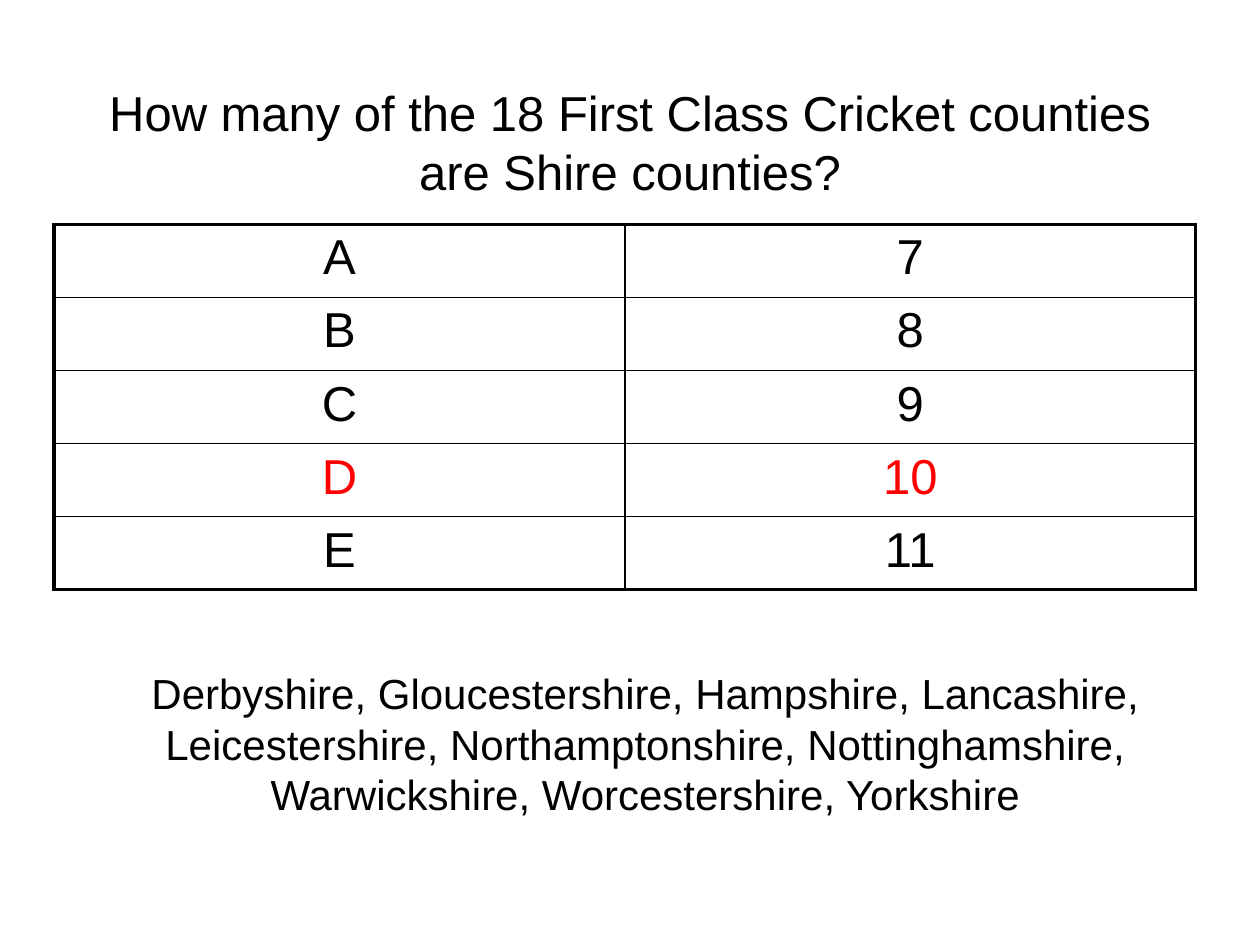
from lxml.etree import SubElement
from pptx import Presentation
from pptx.dml.color import RGBColor
from pptx.enum.text import MSO_ANCHOR, PP_ALIGN
from pptx.oxml.ns import qn
from pptx.util import Inches, Pt

BLACK = RGBColor(0, 0, 0)
RED = RGBColor(255, 0, 0)

QUESTION = "How many of the 18 First Class Cricket counties are Shire counties?"
ANSWERS = [("A", "7"), ("B", "8"), ("C", "9"), ("D", "10"), ("E", "11")]
CORRECT = "D"
COUNTIES = (
    "Derbyshire, Gloucestershire, Hampshire, Lancashire, "
    "Leicestershire, Northamptonshire, Nottinghamshire, "
    "Warwickshire, Worcestershire, Yorkshire"
)
COLUMN, ROW = 4.53, 0.58
OUTER, INNER = Pt(2.25), Pt(1)


def write(frame, text, size, color=BLACK):
    frame.word_wrap = True
    para = frame.paragraphs[0]
    para.alignment = PP_ALIGN.CENTER
    span = para.add_run()
    span.text = text
    span.font.color.rgb = color
    for name, value in {"name": "Arial", "size": Pt(size)}.items():
        setattr(span.font, name, value)
    return para


def draw_border(cell, side, width):
    line = SubElement(cell._tc.get_or_add_tcPr(), qn(f"a:{side}"), w=str(width))
    fill = SubElement(line, qn("a:solidFill"))
    SubElement(fill, qn("a:srgbClr"), val=str(BLACK))


deck = Presentation()
deck.slide_width, deck.slide_height = Inches(10), Inches(7.5)
page = deck.slides.add_slide(deck.slide_layouts[6])

# Question and the list of counties
for text, size, anchor, area in [
    (QUESTION, 28, MSO_ANCHOR.MIDDLE, (0.5, 0.3, 9, 1.64)),
    (COUNTIES, 24, MSO_ANCHOR.TOP, (0.83, 5.25, 8.58, 1.31)),
]:
    box = page.shapes.add_textbox(*map(Inches, area))
    box.text_frame.vertical_anchor = anchor
    write(box.text_frame, text, size)

# Answer table
rows, columns = len(ANSWERS), len(ANSWERS[0])
table = page.shapes.add_table(
    rows, columns, Inches(0.43), Inches(1.78),
    Inches(COLUMN * columns), Inches(ROW * rows),
).table
for flag in ("first_row", "horz_banding"):
    setattr(table, flag, False)

for r, answer in enumerate(ANSWERS):
    for c, text in enumerate(answer):
        cell = table.cell(r, c)
        color = RED if answer[0] == CORRECT else BLACK
        para = write(cell.text_frame, text, 28, color)
        # Space before is a share of the line, so it follows the font size
        spacing = SubElement(para._p.get_or_add_pPr(), qn("a:spcBef"))
        SubElement(spacing, qn("a:spcPct"), val="20000")

        # Heavy outer frame, thin inner lines; borders precede the fill
        edges = {
            "lnL": c == 0,
            "lnR": c == columns - 1,
            "lnT": r == 0,
            "lnB": r == rows - 1,
        }
        for side, outside in edges.items():
            draw_border(cell, side, OUTER if outside else INNER)
        cell.fill.background()

deck.save("out.pptx")
